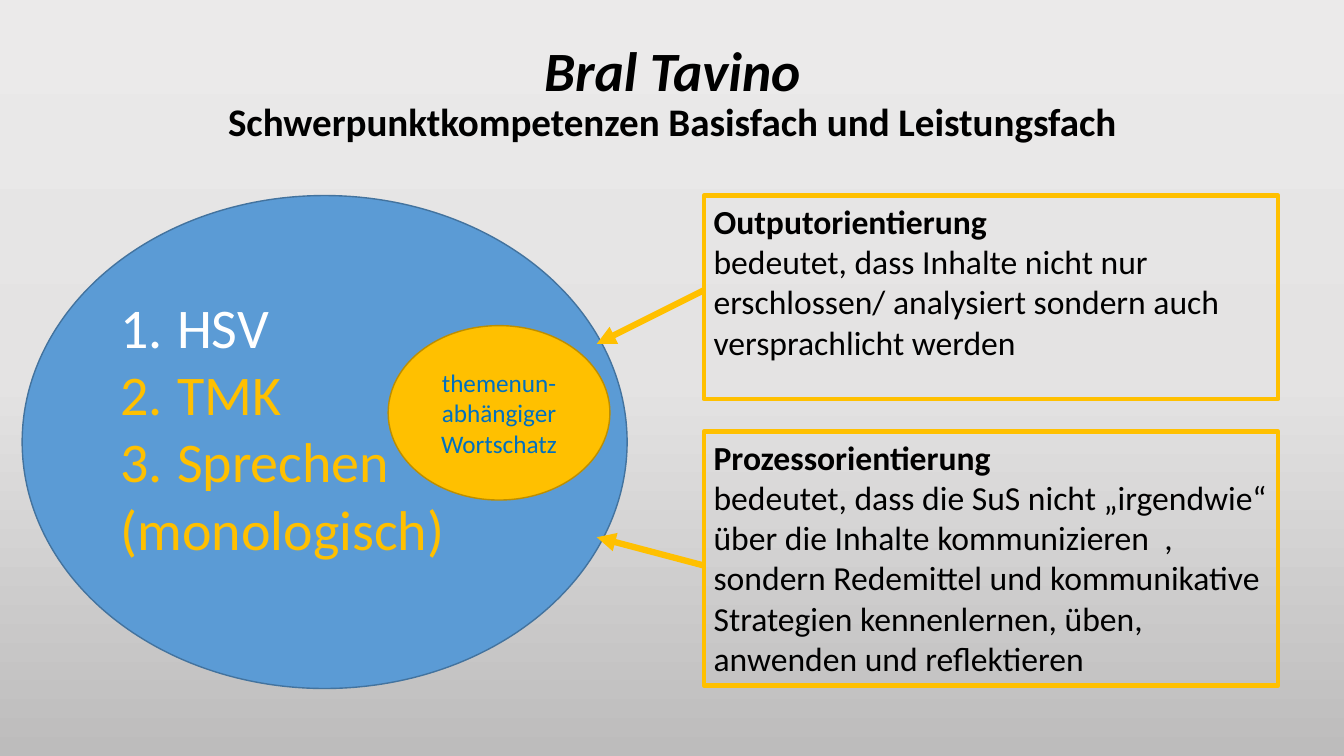
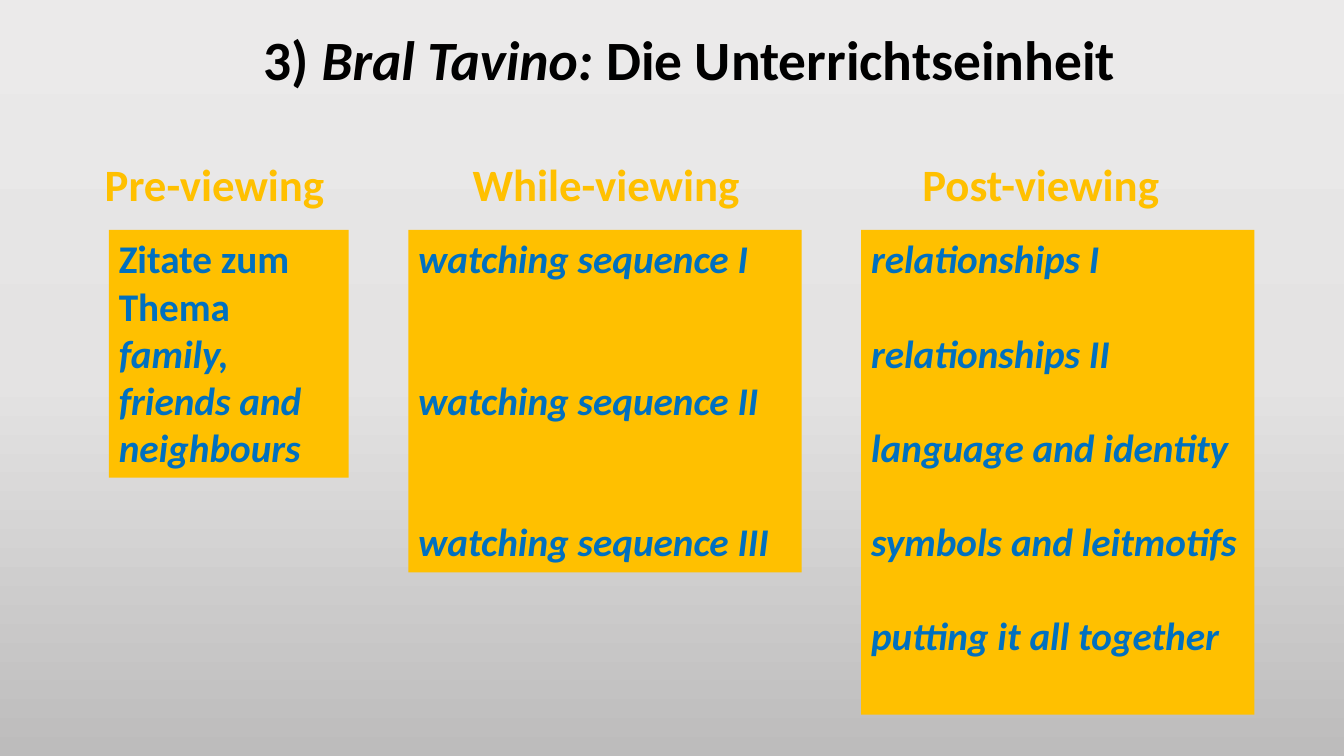
from copy import deepcopy
from dataclasses import dataclass

from lxml import etree
from pptx import Presentation
from pptx import util as u
from pptx.dml.color import RGBColor
from pptx.enum import shapes, text
from pptx.oxml.ns import qn


@dataclass(frozen=True)
class Theme:
    font: str = "Calibri"
    black: str = "000000"
    white: str = "FFFFFF"
    gold: str = "FFC000"
    gold_edge: str = "BD8E00"
    blue: str = "5B9BD5"
    blue_edge: str = "43739E"
    ink: str = "0070C0"
    backdrop: tuple = ((0, "EBEAEA"), (0.5, "E4E3E3"), (1, "BDBCBC"))
    title: float = 39.6
    subtitle: float = 27.9
    skills: int = 40
    heading: int = 32
    card: int = 28
    card_line: float = 33.7
    body: int = 24
    small: int = 18


T = Theme()
LEFT, CENTER = text.PP_ALIGN.LEFT, text.PP_ALIGN.CENTER
TOP, MIDDLE = text.MSO_ANCHOR.TOP, text.MSO_ANCHOR.MIDDLE
RECT, OVAL = shapes.MSO_SHAPE.RECTANGLE, shapes.MSO_SHAPE.OVAL

prs = Presentation()
prs.slide_width, prs.slide_height = u.Inches(13.33), u.Inches(7.5)
COL, ROW = prs.slide_width / 100, prs.slide_height / 100


def put(sp, x, y, w, h, fill=None, line=None, weight=1):
    sp.left, sp.width = int(x * COL), int(w * COL)
    sp.top, sp.height = int(y * ROW), int(h * ROW)
    sp.shadow.inherit = False
    for part, colour in ((sp.fill, fill), (sp.line.fill, line)):
        if colour:
            part.solid()
            part.fore_color.rgb = RGBColor.from_string(colour)
        else:
            part.background()
    if line:
        sp.line.width = u.Pt(weight)
    return sp


def write(sp, paras, size, colour, align=LEFT, anchor=TOP, gap=0, spacing=None):
    tf = sp.text_frame
    tf.word_wrap = True
    tf.auto_size = text.MSO_AUTO_SIZE.NONE
    tf.vertical_anchor = anchor
    for i, runs in enumerate(paras):
        p = tf.add_paragraph() if i else tf.paragraphs[0]
        p.alignment = align
        if spacing:
            p.line_spacing = spacing
        if gap and i:
            p.space_before = u.Pt(gap)
        for words, style, *special in runs:
            r = p.add_run()
            r.text = words
            r.font.name = T.font
            r.font.size = u.Pt(special[0] if special else size)
            r.font.bold, r.font.italic = "b" in style, "i" in style
            r.font.color.rgb = RGBColor.from_string(special[1] if special[1:] else colour)
    return tf


master = prs.slide_master
fill = master.background.fill
fill.gradient()
fill.gradient_angle = 270
stops = master.element.find(".//" + qn("p:bg")).find(".//" + qn("a:gsLst"))
stops.append(deepcopy(stops[-1]))
for stop, (position, colour) in zip(fill.gradient_stops, T.backdrop):
    stop.position = position
    stop.color.rgb = RGBColor.from_string(colour)

titles = [
    ((6.9, 2.8, 86.27, 19.33),
     [[("Bral Tavino", "bi")],
      [("Schwerpunktkompetenzen Basisfach und Leistungsfach", "b", T.subtitle)]]),
    ((11.93, 4.1, 78.77, 8.4),
     [[("3) ", "b"), ("Bral Tavino: ", "bi"), ("Die Unterrichtseinheit", "b")]]),
]
slides = []
for area, paras in titles:
    s = prs.slides.add_slide(prs.slide_layouts[5])
    write(put(s.shapes.title, *area), paras, T.title, T.black, CENTER, MIDDLE, spacing=0.9)
    slides.append(s)
focus, unit = slides

notes = [
    (25.87, 26.93, "Outputorientierung",
     "bedeutet, dass Inhalte nicht nur erschlossen/ analysiert sondern auch "
     "versprachlicht werden"),
    (57.07, 33.6, "Prozessorientierung",
     "bedeutet, dass die SuS nicht „irgendwie“ über die Inhalte kommunizieren  , "
     "sondern Redemittel und kommunikative Strategien kennenlernen, üben, "
     "anwenden und reflektieren"),
]
for y, h, head, body in notes:
    sp = put(focus.shapes.add_shape(RECT, 0, 0, 0, 0), 52.36, y, 42.76, h, line=T.gold, weight=3)
    write(sp, [[(head, "b")], [(body, "")]], T.body, T.black)

sp = put(focus.shapes.add_shape(OVAL, 0, 0, 0, 0), 1.65, 25.87, 45.01, 65.2, T.blue, T.blue_edge)
skills = [[("HSV", "", T.skills, T.white)], [("TMK", "")], [("Sprechen", "")], [("(monologisch)", "")]]
tf = write(sp, skills, T.skills, T.gold, anchor=MIDDLE)
tf.margin_bottom = u.Inches(0.35)
for p in tf.paragraphs[:3]:
    pPr = p._p.get_or_add_pPr()
    pPr.set("marL", str(u.Inches(0.56)))
    pPr.set("indent", str(-u.Inches(0.56)))
    etree.SubElement(pPr, qn("a:buFont"), typeface="+mj-lt")
    etree.SubElement(pPr, qn("a:buAutoNum"), type="arabicPeriod")

for start, end in ((38.4, 45.47), (74.8, 71.07)):
    arrow = focus.shapes.add_connector(
        shapes.MSO_CONNECTOR.STRAIGHT,
        int(52.36 * COL), int(start * ROW), int(44.41 * COL), int(end * ROW))
    arrow.line.color.rgb = RGBColor.from_string(T.gold)
    arrow.line.width = u.Pt(4.5)
    spPr = arrow.element.spPr
    etree.SubElement(spPr.find(qn("a:ln")), qn("a:tailEnd"), type="triangle")
    etree.SubElement(spPr, qn("a:effectLst"))

sp = put(focus.shapes.add_shape(OVAL, 0, 0, 0, 0), 28.88, 43.07, 16.5, 23.07, T.gold, T.gold_edge)
write(sp, [[("themenun-abhängiger Wortschatz", "")]], T.small, T.ink, CENTER, MIDDLE)

phases = [
    ("Pre-viewing", -1.05, 19.95, 17.85, 32.8, 0,
     [("Zitate zum Thema", "b"), ("family, friends and neighbours", "bi")]),
    ("While-viewing", 4.05, 21.68, 29.26, 45.33, 2,
     [(f"watching sequence {n}", "bi") for n in ("I", "II", "III")]),
    ("Post-viewing", 3.82, 21.68, 29.26, 64.13, 1,
     [(topic, "bi") for topic in (
         "relationships I", "relationships II", "language and identity",
         "symbols and leitmotifs", "putting it all together")]),
]
x, gutter = 8.1, 4.43
for head, shift, head_w, w, h, skipped, items in phases:
    sp = put(unit.shapes.add_textbox(0, 0, 0, 0), x + shift, 20.13, head_w, 8.53)
    write(sp, [[(head, "b")]], T.heading, T.gold)
    sp = put(unit.shapes.add_shape(RECT, 0, 0, 0, 0), x, 30.4, w, h, T.gold)
    write(sp, [[item] for item in items], T.card, T.ink, gap=skipped * T.card_line)
    x += w + gutter

prs.save("out.pptx")
